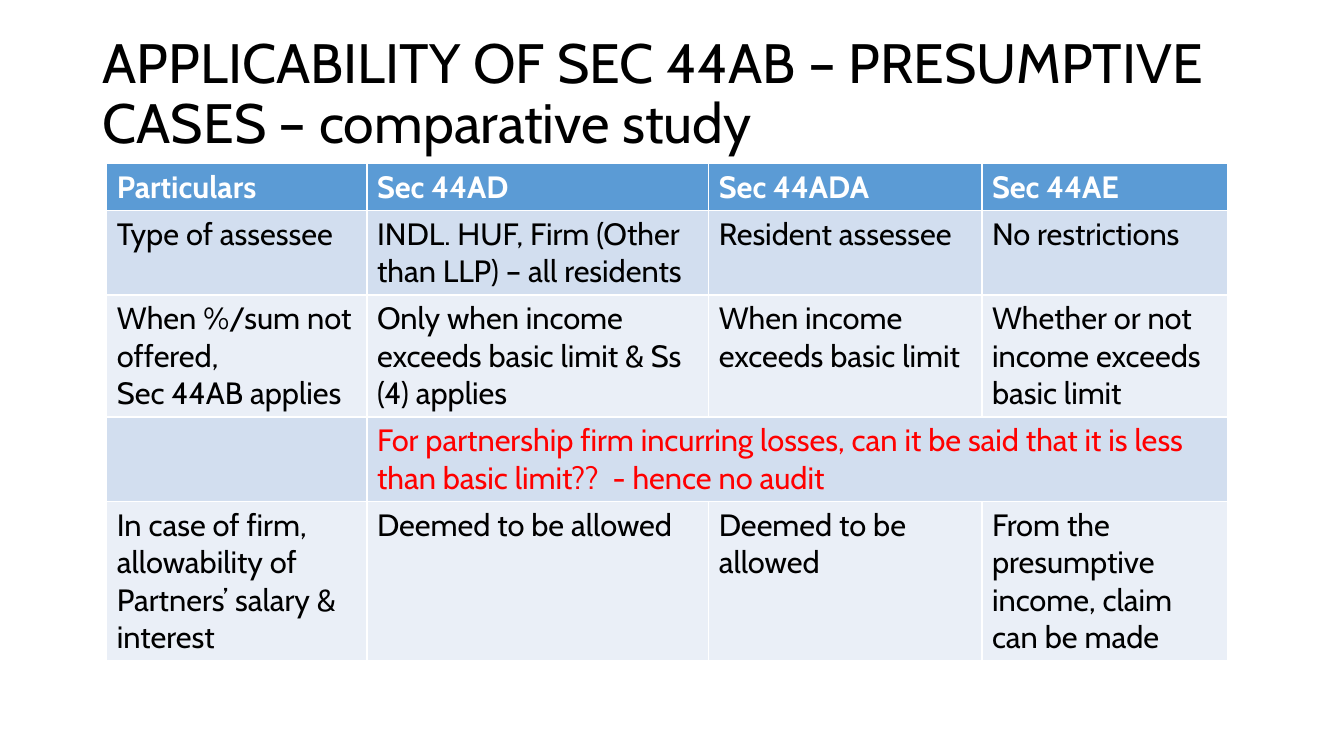
from pptx import Presentation
from pptx.dml.color import RGBColor
from pptx.enum.text import MSO_ANCHOR
from pptx.util import Inches, Pt

MIDDLE = MSO_ANCHOR.MIDDLE
FONT = "Cabin"
COLORS = {
    "text": "000000",
    "header": "5B9BD5",
    "header_text": "FFFFFF",
    "odd_band": "D2DEEF",
    "even_band": "EAEFF7",
    "question": "FF0000",
}
TITLE = "APPLICABILITY OF SEC 44AB – PRESUMPTIVE CASES – comparative study"
COLUMN_WIDTHS = [2.58, 3.39, 2.71, 2.44]
ROW_HEIGHTS = [0.46, 0.84, 1.21, 0.84, 1.58]
QUESTION_ROW = 3
ROWS = [
    ["Particulars", "Sec 44AD", "Sec 44ADA", "Sec 44AE"],
    ["Type of assessee", "INDL. HUF, Firm (Other than LLP) – all residents",
     "Resident assessee", "No restrictions"],
    ["When %/sum not offered,\nSec 44AB applies",
     "Only when income exceeds basic limit & Ss (4) applies",
     "When income exceeds basic limit",
     "Whether or not income exceeds basic limit"],
    ["", "For partnership firm incurring losses, can it be said that it is "
     "less than basic limit??  - hence no audit", "", ""],
    ["In case of firm, allowability of Partners’ salary & interest",
     "Deemed to be allowed", "Deemed to be allowed",
     "From the presumptive income, claim can be made"],
]


def color(name):
    return RGBColor.from_string(COLORS[name])


def set_font(para, size, color_name, bold=False):
    para.font.name = FONT
    para.font.size = Pt(size)
    para.font.bold = bold
    para.font.color.rgb = color(color_name)


def add_title(page, left, top, width, height):
    box = page.shapes.add_textbox(
        Inches(left), Inches(top), Inches(width), Inches(height))
    frame = box.text_frame
    frame.word_wrap = True
    frame.vertical_anchor = MIDDLE
    frame.text = TITLE
    para = frame.paragraphs[0]
    para.line_spacing = 0.9
    set_font(para, 39.6, "text")


def row_style(row):
    """Return the fill and text colour names of a table row."""
    if row == 0:
        return "header", "header_text"
    fill = "odd_band" if row % 2 else "even_band"
    return fill, "question" if row == QUESTION_ROW else "text"


def add_comparison(page, left, top, width, height):
    table = page.shapes.add_table(
        len(ROWS), len(COLUMN_WIDTHS), Inches(left), Inches(top),
        Inches(width), Inches(height)).table
    for column, column_width in zip(table.columns, COLUMN_WIDTHS):
        column.width = Inches(column_width)
    for row, row_height in zip(table.rows, ROW_HEIGHTS):
        row.height = Inches(row_height)

    # The open question spans all three sections
    table.cell(QUESTION_ROW, 1).merge(table.cell(QUESTION_ROW, 3))

    for row, texts in enumerate(ROWS):
        fill, text_color = row_style(row)
        for column, text in enumerate(texts):
            cell = table.cell(row, column)
            cell.fill.solid()
            cell.fill.fore_color.rgb = color(fill)
            cell.text = text
            for para in cell.text_frame.paragraphs:
                set_font(para, 22, text_color, bold=row == 0)


def main():
    deck = Presentation()
    deck.slide_width, deck.slide_height = Inches(13.33), Inches(7.5)
    page = deck.slides.add_slide(deck.slide_layouts[6])
    add_title(page, 0.92, 0.4, 11.4, 1.1)
    add_comparison(page, 1.06, 1.62, sum(COLUMN_WIDTHS), sum(ROW_HEIGHTS))
    deck.save("out.pptx")


if __name__ == "__main__":
    main()
